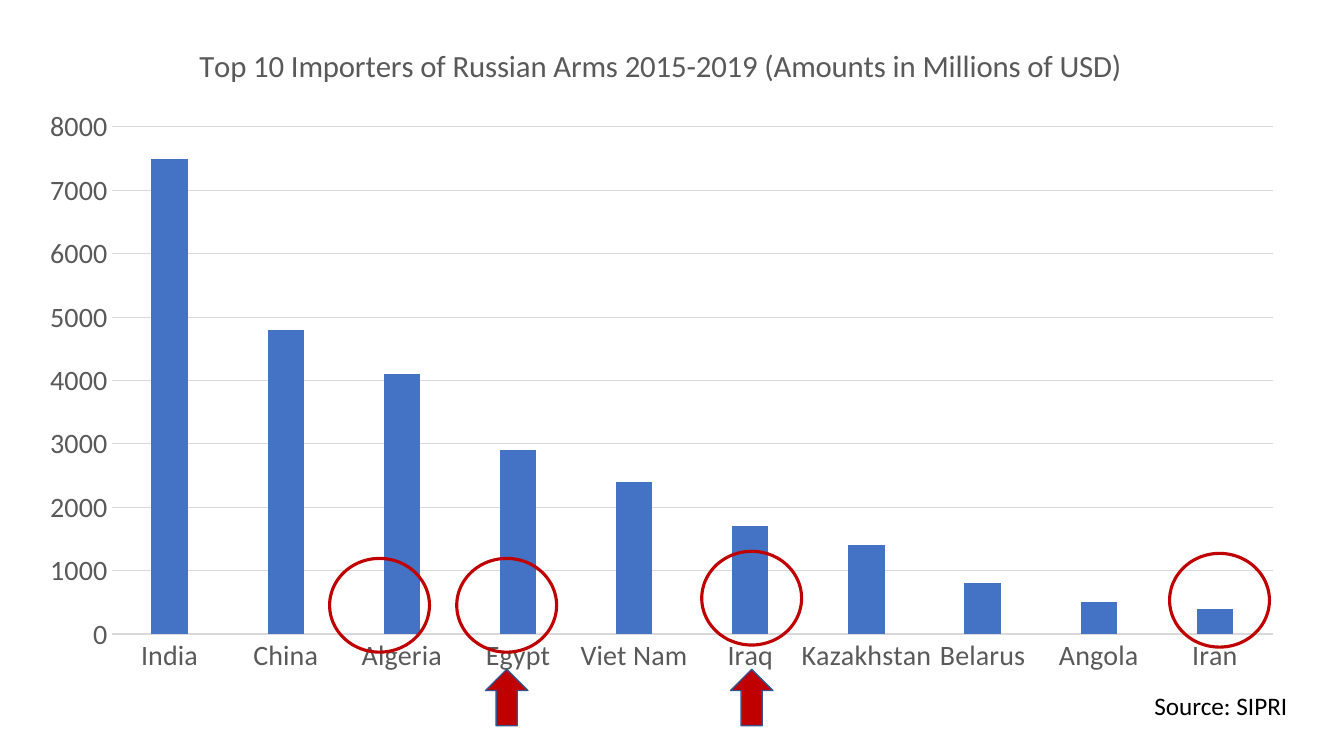
from lxml import etree
from pptx import Presentation
from pptx import util as u
from pptx.chart.data import CategoryChartData
from pptx.dml.color import RGBColor
from pptx.enum import chart as ch, shapes, text

WIDE, HIGH = u.Inches(13.33), u.Inches(7.5)
FONT = "Calibri"
RED, BLUE, EDGE = "C00000", "4472C4", "325491"
GREY, PALE, BLACK = "595959", "D9D9D9", "000000"

SALES = {
    "India": 7500, "China": 4800, "Algeria": 4100, "Egypt": 2900,
    "Viet Nam": 2400, "Iraq": 1700, "Kazakhstan": 1400, "Belarus": 800,
    "Angola": 500, "Iran": 400,
}
# Centres of the rings, in percent of the slide
RINGS = {"Egypt": (37.7, 80.07), "Iraq": (55.93, 79.13),
         "Algeria": (28.24, 80.07), "Iran": (90.74, 79.4)}
ARROWS = ("Iraq", "Egypt")


def color(code):
    return RGBColor.from_string(code)


def area(x, y, w, h):
    """Turn percentages of the slide into lengths."""
    return (int(WIDE * x / 100), int(HIGH * y / 100),
            int(WIDE * w / 100), int(HIGH * h / 100))


def style(font, size, code):
    font.name, font.size, font.bold = FONT, u.Pt(size), False
    font.color.rgb = color(code)


def stroke(line, code, width):
    line.color.rgb = color(code)
    line.width = u.Pt(width)


def mark(slide, kind, x, y, w, h, line, width, fill=None):
    """Draw a preset shape around its centre."""
    item = slide.shapes.add_shape(kind, *area(x - w / 2, y - h / 2, w, h))
    item.shadow.inherit = False
    if fill:
        item.fill.solid()
        item.fill.fore_color.rgb = color(fill)
    else:
        item.fill.background()
    stroke(item.line, line, width)
    return item


def place(chart, **shares):
    """Fix the inner plot area as shares of the chart."""
    plot = chart._chartSpace.chart.plotArea
    for old in plot.findall("{*}layout"):
        plot.remove(old)
    space = etree.QName(plot).namespace
    layout = etree.Element(f"{{{space}}}layout")
    manual = etree.SubElement(layout, f"{{{space}}}manualLayout")
    rules = {"layoutTarget": "inner", "xMode": "edge", "yMode": "edge"}
    for tag, val in {**rules, **shares}.items():
        etree.SubElement(manual, f"{{{space}}}{tag}", val=str(val))
    plot.insert(0, layout)


def bars(slide):
    data = CategoryChartData()
    data.categories = list(SALES)
    data.add_series("Series 1", list(SALES.values()))
    frame = slide.shapes.add_chart(
        ch.XL_CHART_TYPE.COLUMN_CLUSTERED, *area(1.65, 2.67, 94.97, 88.27), data)
    chart = frame.chart
    style(chart.font, 10, BLACK)
    chart.has_legend = False

    # Title
    chart.has_title = True
    head = chart.chart_title.text_frame
    head.text = "Top 10 Importers of Russian Arms 2015-2019 (Amounts in Millions of USD)"
    style(head.paragraphs[0].runs[0].font, 22, GREY)
    chart.chart_title.include_in_layout = False

    # Columns
    plot = chart.plots[0]
    plot.gap_width, plot.overlap, plot.vary_by_categories = 219, -27, False
    fill = plot.series[0].format.fill
    fill.solid()
    fill.fore_color.rgb = color(BLUE)

    # Axes
    cats, vals = chart.category_axis, chart.value_axis
    for axis in (cats, vals):
        axis.major_tick_mark = axis.minor_tick_mark = ch.XL_TICK_MARK.NONE
        style(axis.tick_labels.font, 20, GREY)
    stroke(cats.format.line, PALE, 0.75)
    # Automatic rotation keeps each label on one line
    cats._element.txPr.bodyPr.set("rot", "-60000000")
    cats._element.txPr.bodyPr.set("vert", "horz")
    vals.format.line.fill.background()
    vals.minimum_scale, vals.maximum_scale, vals.major_unit = 0, 8000, 1000
    vals.has_major_gridlines = True
    stroke(vals.major_gridlines.format.line, PALE, 0.75)
    place(chart, x=0.07, y=0.16, w=0.91, h=0.76)


def note(slide, words):
    frame = slide.shapes.add_textbox(*area(85.15, 90.67, 12.83, 5.33)).text_frame
    frame.word_wrap = True
    frame.auto_size = text.MSO_AUTO_SIZE.SHAPE_TO_FIT_TEXT
    frame.text = words
    style(frame.paragraphs[0].runs[0].font, 18, BLACK)


def main():
    deck = Presentation()
    deck.slide_width, deck.slide_height = WIDE, HIGH
    slide = deck.slides.add_slide(deck.slide_layouts[6])

    bars(slide)
    note(slide, "Source: SIPRI")

    # Rings and arrows that point out countries
    kind = shapes.MSO_SHAPE
    for x, y in RINGS.values():
        mark(slide, kind.OVAL, x, y, 7.43, 12.4, RED, 2.25)
    for land in ARROWS:
        arrow = mark(slide, kind.RIGHT_ARROW, RINGS[land][0], 92.27, 4.2, 5.6,
                     EDGE, 1, RED)
        arrow.rotation = 270

    deck.save("out.pptx")


if __name__ == "__main__":
    main()
